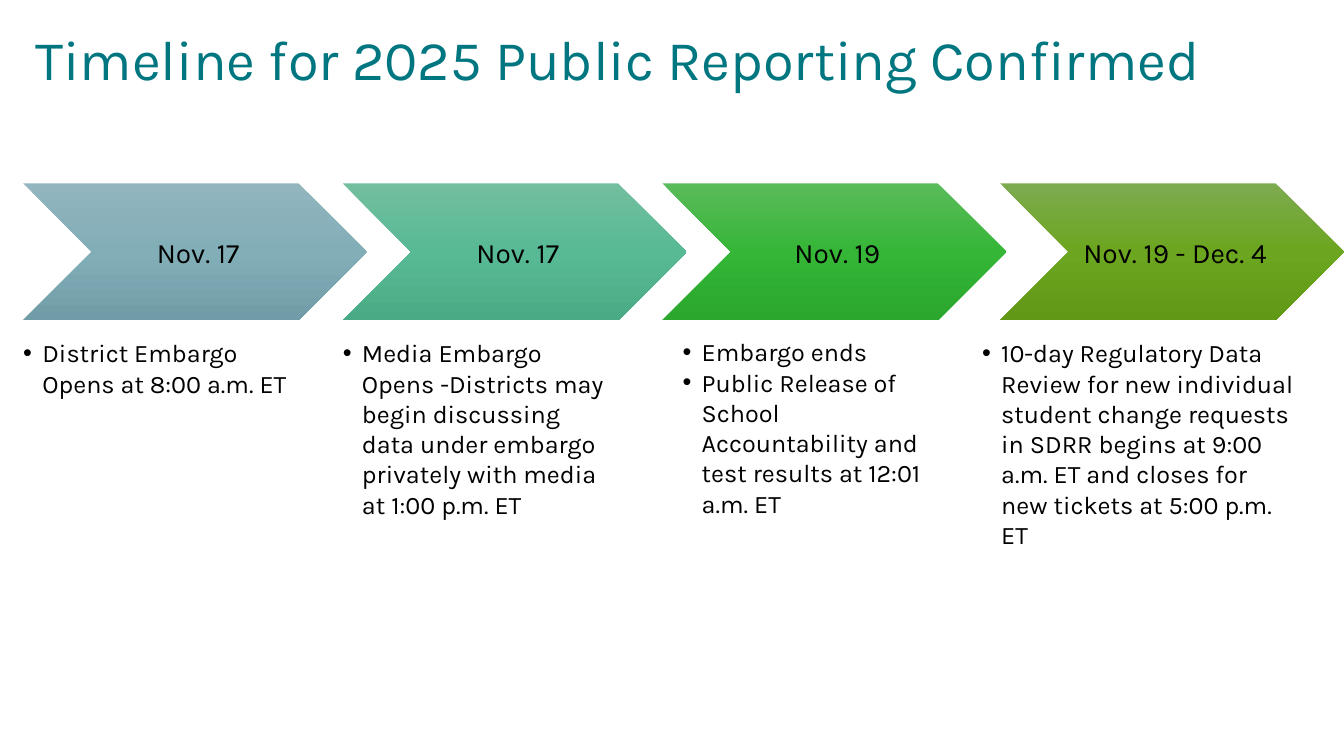
"""Build the 2025 public reporting timeline slide."""
import copy

import pptx
import pptx.dml.color
import pptx.enum.shapes
import pptx.enum.text
import pptx.oxml
import pptx.oxml.ns
import pptx.util

Inches, Pt = pptx.util.Inches, pptx.util.Pt
PP_ALIGN, ANCHOR = pptx.enum.text.PP_ALIGN, pptx.enum.text.MSO_ANCHOR

TITLE = "Timeline for 2025 Public Reporting Confirmed"
STAGES = [
    {"date": "Nov. 17", "left": 0.23, "colors": ("92B5BE", "82AEB8", "709CA7"),
     "box": (0.23, 3.35, 2.72, 1.7),
     "notes": ["District Embargo Opens at 8:00 a.m. ET"]},
    {"date": "Nov. 17", "left": 3.4, "colors": ("72BE9F", "58BA94", "4AAA85"),
     "box": (3.4, 3.35, 2.72, 1.7),
     "notes": ["Media Embargo Opens -Districts may begin discussing data under "
               "embargo privately with media at 1:00 p.m. ET"]},
    {"date": "Nov. 19", "left": 6.57, "colors": ("5ABB5B", "35B637", "2AA72C"),
     "box": (6.77, 3.34, 2.57, 1.7),
     "notes": ["Embargo ends",
               "Public Release of School Accountability and test results at "
               "12:01 a.m. ET"]},
    {"date": "Nov. 19 - Dec. 4", "left": 9.92,
     "colors": ("7DAB50", "6CA51F", "619816"),
     "box": (9.74, 3.35, 3.09, 1.7),
     "notes": ["10-day Regulatory Data Review for new individual student change "
               "requests in SDRR begins at 9:00 a.m. ET and closes for new "
               "tickets at 5:00 p.m. ET"]},
]
CHEVRON_TOP, CHEVRON_W, CHEVRON_H = 1.82, 3.41, 1.36
INDENT = 0.19
SIDES = ("margin_left", "margin_top", "margin_right", "margin_bottom")


def color(value):
    return pptx.dml.color.RGBColor.from_string(value)


def setup_frame(sp, margins, anchor):
    tf = sp.text_frame
    values = dict(zip(SIDES, map(Inches, margins)))
    values.update(word_wrap=True, vertical_anchor=anchor)
    for name, value in values.items():
        setattr(tf, name, value)
    return tf


def write(p, text, size, ink="000000", **layout):
    r = p.add_run()
    r.text = text
    for name, value in {"name": "Karla", "size": Pt(size)}.items():
        setattr(r.font, name, value)
    r.font.color.rgb = color(ink)
    for name, value in layout.items():
        setattr(p, name, value)


def add_indent(p, left, hang=0, bullet=None):
    pPr = p._p.get_or_add_pPr()
    pPr.set("marL", str(Inches(left)))
    pPr.set("indent", str(Inches(-hang)))
    if bullet:
        ns = pptx.oxml.ns.nsdecls("a")
        for xml in (f'<a:buFont {ns} typeface="Arial"/>',
                    f'<a:buChar {ns} char="{bullet}"/>'):
            pPr.append(pptx.oxml.parse_xml(xml))


def add_chevron(s, stage):
    sp = s.shapes.add_shape(
        pptx.enum.shapes.MSO_SHAPE.CHEVRON,
        *map(Inches, (stage["left"], CHEVRON_TOP, CHEVRON_W, CHEVRON_H)))
    sp.shadow.inherit = False
    sp.line.fill.background()
    sp.fill.gradient()
    sp.fill.gradient_angle = 270
    stops = sp._element.spPr.find(".//" + pptx.oxml.ns.qn("a:gsLst"))
    stops.append(copy.deepcopy(stops[0]))
    for i, (stop, shade) in enumerate(zip(sp.fill.gradient_stops, stage["colors"])):
        stop.color.rgb = color(shade)
        stop.position = i / 2
    tf = setup_frame(sp, (0.09, 0.03, 0.03, 0.03), ANCHOR.MIDDLE)
    write(tf.paragraphs[0], stage["date"], 20, alignment=PP_ALIGN.CENTER)


def add_notes(s, stage):
    sp = s.shapes.add_textbox(*map(Inches, stage["box"]))
    tf = setup_frame(sp, (0, 0, 0, 0), ANCHOR.TOP)
    for i, note in enumerate(stage["notes"]):
        p = tf.add_paragraph() if i else tf.paragraphs[0]
        add_indent(p, INDENT, INDENT, "•")
        write(p, note, 18)


def main():
    prs = pptx.Presentation()
    prs.slide_width, prs.slide_height = Inches(13.33), Inches(7.5)
    s = prs.slides.add_slide(prs.slide_layouts[6])
    sp = s.shapes.add_textbox(*map(Inches, (0, 0.01, 13.33, 1.22)))
    p = setup_frame(sp, (0.1, 0.05, 0.1, 0.05), ANCHOR.MIDDLE).paragraphs[0]
    add_indent(p, 0.25)
    write(p, TITLE, 40, "007780", line_spacing=0.9)
    for stage in STAGES:
        add_chevron(s, stage)
        add_notes(s, stage)
    prs.save("out.pptx")


if __name__ == "__main__":
    main()
